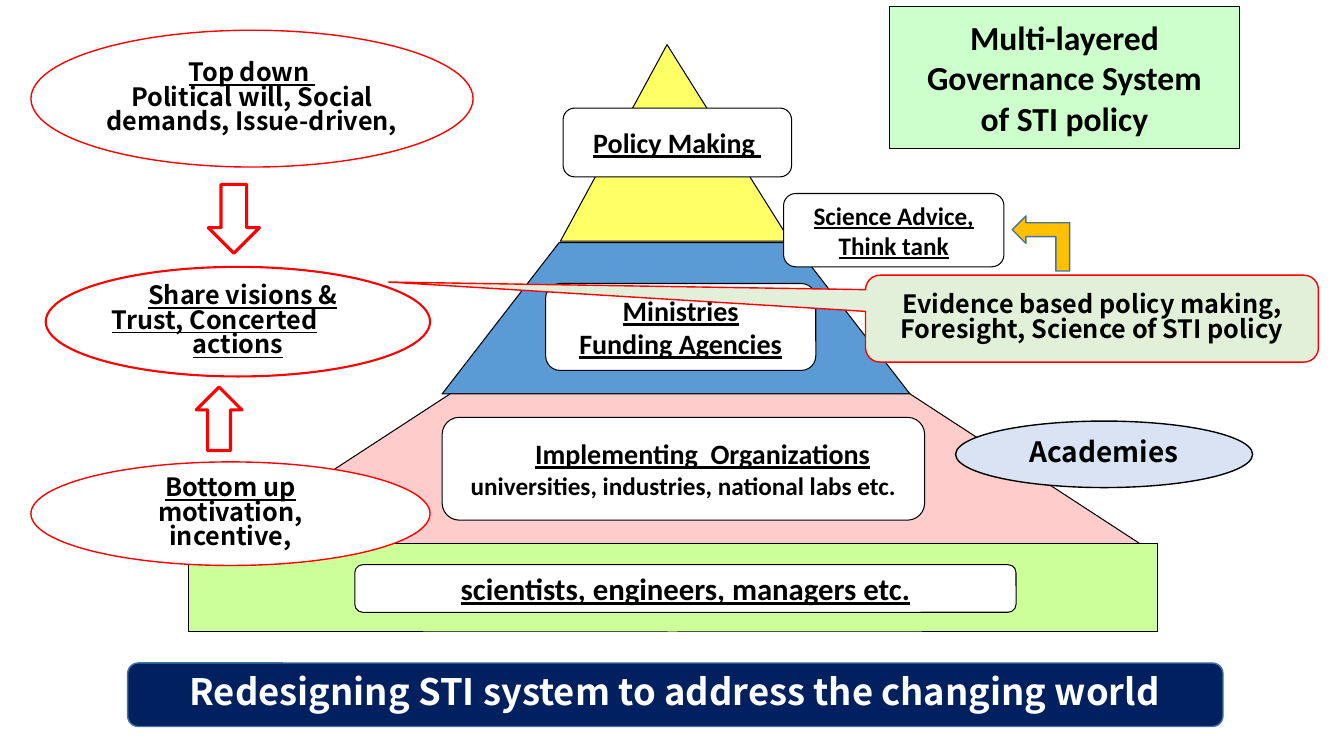
from pptx import Presentation
from pptx.dml.color import RGBColor
from pptx.enum.shapes import MSO_SHAPE
from pptx.enum.text import MSO_ANCHOR, PP_ALIGN
from pptx.util import Inches, Pt

WIDTH, HEIGHT = Inches(13.33), Inches(7.5)
COL, ROW = WIDTH / 100, HEIGHT / 100

BLACK = RGBColor(0x00, 0x00, 0x00)
WHITE = RGBColor(0xFF, 0xFF, 0xFF)
RED = RGBColor(0xFF, 0x00, 0x00)
YELLOW = RGBColor(0xFF, 0xFF, 0x66)
BLUE = RGBColor(0x5B, 0x9B, 0xD5)
PINK = RGBColor(0xFF, 0xCC, 0xCC)
LIME = RGBColor(0xCC, 0xFF, 0x99)
MINT = RGBColor(0xCC, 0xFF, 0xCC)
PALE_BLUE = RGBColor(0xDA, 0xE3, 0xF3)
PALE_GREEN = RGBColor(0xE2, 0xF0, 0xD9)
NAVY = RGBColor(0x00, 0x20, 0x60)
STEEL = RGBColor(0x43, 0x73, 0x9E)
ORANGE = RGBColor(0xFF, 0xC0, 0x00)

LATIN, SANS = "Calibri", "Noto Sans CJK JP"
LINE_SPACING = {LATIN: 1.0, SANS: 0.82}


def paint(shape, fill, line, weight):
    shape.shadow.inherit = False
    if fill is None:
        shape.fill.background()
    else:
        shape.fill.solid()
        shape.fill.fore_color.rgb = fill
    shape.line.color.rgb = line
    shape.line.width = Pt(weight)


def add_block(slide, preset, cell, fill=WHITE, line=BLACK, weight=0.75):
    """Draw a preset shape; cell is left, top, width, height in columns and rows."""
    left, top, width, height = cell
    block = slide.shapes.add_shape(
        preset, round(left * COL), round(top * ROW), round(width * COL), round(height * ROW))
    paint(block, fill, line, weight)
    return block


def add_layer(slide, top, bottom, top_span, bottom_span, fill):
    """Draw one trapezoid of the pyramid; a span is its left and right column."""
    corners = [(top_span[1], top), (bottom_span[1], bottom), (bottom_span[0], bottom)]
    builder = slide.shapes.build_freeform(round(top_span[0] * COL), round(top * ROW))
    builder.add_line_segments([(round(x * COL), round(y * ROW)) for x, y in corners])
    paint(builder.convert_to_shape(), fill, BLACK, 0.75)


def write(block, lines, size, font=LATIN, color=BLACK):
    """Fill a block with bold paragraphs, each a (text, underlined) pair."""
    frame = block.text_frame
    frame.word_wrap = True
    frame.vertical_anchor = MSO_ANCHOR.MIDDLE
    for index, (text, underlined) in enumerate(lines):
        paragraph = frame.add_paragraph() if index else frame.paragraphs[0]
        paragraph.alignment = PP_ALIGN.CENTER
        paragraph.line_spacing = LINE_SPACING[font]
        run = paragraph.add_run()
        run.text = text
        run.font.name = font
        run.font.size = Pt(size)
        run.font.bold = True
        run.font.underline = underlined
        run.font.color.rgb = color
    return frame.paragraphs


def indent(paragraph, attribute, length):
    paragraph._p.get_or_add_pPr().set(attribute, str(int(length)))


def add_label(slide, cell, lines, size):
    return write(add_block(slide, MSO_SHAPE.ROUNDED_RECTANGLE, cell), lines, size)


def add_oval(slide, cell, lines, fill=WHITE, line=RED, weight=1, size=18):
    oval = add_block(slide, MSO_SHAPE.OVAL, cell, fill, line, weight)
    return write(oval, lines, size, SANS)


def add_pyramid(slide):
    peak = add_block(slide, MSO_SHAPE.ISOSCELES_TRIANGLE, (41.7, 5.9, 17.1, 26), YELLOW)
    peak.adjustments[0] = 0.464
    add_layer(slide, 32.1, 52.1, (41.6, 59), (32.9, 67.7), BLUE)
    add_layer(slide, 52.1, 71.9, (33.5, 67.7), (16.4, 84.8), PINK)
    add_block(slide, MSO_SHAPE.RECTANGLE, (14, 71.9, 72.1, 11.7), LIME)

    add_label(slide, (41.9, 14.3, 17, 9.1), [("Policy Making ", True)], 20)
    add_label(slide, (40.6, 37.5, 20.1, 11.5),
              [("Ministries", True), ("Funding Agencies", True)], 20)
    organizations, members = add_label(
        slide, (32.9, 55.2, 35.9, 13.6),
        [("Implementing  Organizations", True),
         ("universities, industries, national labs etc.", False)], 20)
    indent(organizations, "marL", Inches(0.38))
    members.runs[0].font.size = Pt(18)
    add_label(slide, (26.4, 74.7, 49.2, 6.3),
              [("scientists, engineers, managers etc.", True)], 22)


def add_drivers(slide):
    """Draw the top-down and bottom-up forces that meet in shared visions."""
    add_block(slide, MSO_SHAPE.DOWN_ARROW, (15.5, 24.4, 3.8, 9.1), WHITE, RED, 2.25)
    add_block(slide, MSO_SHAPE.UP_ARROW, (14.6, 51.2, 3.4, 8.4), WHITE, RED, 2.25)
    add_oval(slide, (2.3, 4, 32.9, 18.1),
             [("Top down ", True),
              ("Political will, Social demands, Issue-driven,", False)], fill=None)
    add_oval(slide, (2.3, 61.1, 29.7, 13.7),
             [("Bottom up", True), ("motivation, incentive,", False)])
    visions, _ = add_oval(
        slide, (3.4, 35.3, 28.6, 14.5),
        [("Share visions & Trust, Concerted", True), ("actions", True)], weight=1.5)
    visions.alignment = PP_ALIGN.LEFT
    indent(visions, "indent", Inches(0.36))


def add_advice(slide):
    add_oval(slide, (71.1, 55.7, 22.1, 8.8), [("Academies", False)],
             PALE_BLUE, BLACK, size=20)
    add_label(slide, (58.3, 25.6, 16.4, 9.7),
              [("Science Advice,", True), ("Think tank", True)], 18)
    evidence = add_block(slide, MSO_SHAPE.ROUNDED_RECTANGULAR_CALLOUT,
                         (64.4, 36.4, 33.7, 11.5), PALE_GREEN, RED, 1)
    for index, value in enumerate((-1.553, -0.421, 0.167)):
        evidence.adjustments[index] = value
    write(evidence, [("Evidence based policy making, Foresight, Science of STI policy",
                      False)], 18, SANS)
    feedback = add_block(slide, MSO_SHAPE.BENT_UP_ARROW, (75.4, 28.4, 4.1, 7.6),
                         ORANGE, STEEL, 1)
    feedback.rotation = 270


def main():
    deck = Presentation()
    deck.slide_width, deck.slide_height = WIDTH, HEIGHT
    slide = deck.slides.add_slide(deck.slide_layouts[6])

    add_pyramid(slide)
    title = add_block(slide, MSO_SHAPE.RECTANGLE, (66.2, 0.9, 26, 18.7), MINT)
    write(title, [("Multi-layered", False), ("Governance System", False),
                  ("of STI policy", False)], 24)
    add_drivers(slide)
    add_advice(slide)
    message = add_block(slide, MSO_SHAPE.ROUNDED_RECTANGLE, (9.5, 87.7, 81.5, 8.4),
                        NAVY, STEEL, 1)
    write(message, [("Redesigning STI system to address the changing world", False)],
          26, SANS, WHITE)

    deck.save("out.pptx")


if __name__ == "__main__":
    main()
